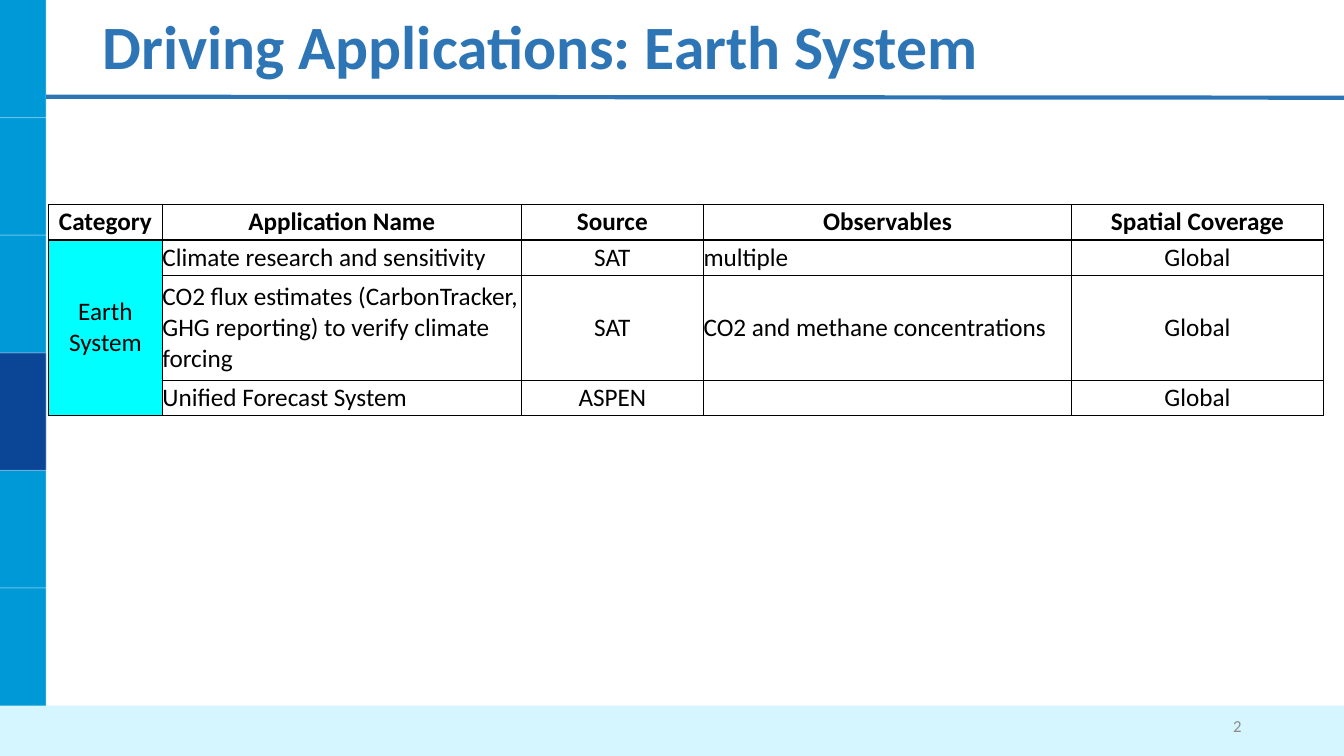
from dataclasses import dataclass

import pptx
import pptx.dml.color
import pptx.enum.shapes
import pptx.enum.text
import pptx.oxml
import pptx.oxml.ns
import pptx.util
from pptx.enum.text import MSO_ANCHOR, PP_ALIGN
from pptx.util import Pt

WIDTH, HEIGHT = 960, 540
BAR_WIDTH = 33
BAND = 84  # height of one sidebar block
FONT = "Calibri"
BLUE = "2E75B6"
A_NS = pptx.oxml.ns.nsdecls("a")


@dataclass
class Block:
    left: float
    top: float
    width: float
    height: float
    color: str


@dataclass
class Line:
    x1: float
    y1: float
    x2: float
    y2: float
    color: str = "FFFFFF"
    weight: float = 0.75
    opacity: int = 40


@dataclass
class Column:
    header: str
    width: float
    align: PP_ALIGN
    values: tuple[str, ...]


BLOCKS = [
    Block(0, 0, BAR_WIDTH, HEIGHT, "0099D8"),
    Block(0, 3 * BAND, BAR_WIDTH, BAND, "0B4596"),
    Block(0, 6 * BAND, WIDTH, HEIGHT - 6 * BAND, "D5F5FF"),
]
LINES = [
    *(Line(0, i * BAND, BAR_WIDTH, i * BAND) for i in range(1, 6)),
    Line(BAR_WIDTH, 0, BAR_WIDTH, 6 * BAND),
    Line(BAR_WIDTH, 69.1, WIDTH, 69.8, BLUE, 3, 100),
]
COLUMNS = [
    Column("Category", 81.4, PP_ALIGN.CENTER, ("Earth System", "", "")),
    Column("Application Name", 256.3, PP_ALIGN.LEFT, (
        "Climate research and sensitivity",
        "CO2 flux estimates (CarbonTracker, GHG reporting) to verify climate forcing",
        "Unified Forecast System",
    )),
    Column("Source", 130.3, PP_ALIGN.CENTER, ("SAT", "SAT", "ASPEN")),
    Column("Observables", 262.8, PP_ALIGN.LEFT,
           ("multiple", "CO2 and methane concentrations", "")),
    Column("Spatial Coverage", 180, PP_ALIGN.CENTER, ("Global",) * 3),
]
ROW_HEIGHTS = [25.2, 25.2, 74.9, 25.2]


def rgb(color: str) -> pptx.dml.color.RGBColor:
    return pptx.dml.color.RGBColor.from_string(color)


def add_run(p, text: str, size: float, color: str, bold: bool = False) -> None:
    r = p.add_run()
    r.text = text
    r.font.name = FONT
    r.font.size = Pt(size)
    r.font.bold = bold
    r.font.color.rgb = rgb(color)


def add_block(s, block: Block) -> None:
    sp = s.shapes.add_shape(
        pptx.enum.shapes.MSO_SHAPE.RECTANGLE,
        Pt(block.left), Pt(block.top), Pt(block.width), Pt(block.height))
    sp.shadow.inherit = False
    sp.fill.solid()
    sp.fill.fore_color.rgb = rgb(block.color)
    sp.line.fill.background()


def add_line(s, line: Line) -> None:
    cxn = s.shapes.add_connector(
        pptx.enum.shapes.MSO_CONNECTOR.STRAIGHT,
        Pt(line.x1), Pt(line.y1), Pt(line.x2), Pt(line.y2))
    cxn.line.width = Pt(line.weight)
    cxn.line.color.rgb = rgb(line.color)
    sp_pr = cxn.element.spPr
    if line.opacity < 100:
        color = sp_pr.find(".//" + pptx.oxml.ns.qn("a:srgbClr"))
        color.append(pptx.oxml.parse_xml(
            f'<a:alpha {A_NS} val="{line.opacity * 1000}"/>'))
    sp_pr.append(pptx.oxml.parse_xml(f"<a:effectLst {A_NS}/>"))


def add_title(s, text: str) -> None:
    sp = s.shapes.title
    sp.left, sp.top, sp.width, sp.height = Pt(66), Pt(2.9), Pt(828), Pt(65.5)
    tf = sp.text_frame
    tf.auto_size = pptx.enum.text.MSO_AUTO_SIZE.NONE
    tf.vertical_anchor = MSO_ANCHOR.MIDDLE
    p = tf.paragraphs[0]
    p.alignment = PP_ALIGN.LEFT
    p.line_spacing = 0.9
    add_run(p, text, 44, BLUE, bold=True)


def add_page_number(s, number: str) -> None:
    sp = s.shapes.add_textbox(Pt(678), Pt(504), Pt(216), Pt(28.8))
    tf = sp.text_frame
    tf.word_wrap = True
    tf.vertical_anchor = MSO_ANCHOR.MIDDLE
    p = tf.paragraphs[0]
    p.alignment = PP_ALIGN.RIGHT
    add_run(p, number, 12, "8C8C8C")


def format_cell(cell) -> None:
    """Remove the margins and the fill, and draw a thin black border."""
    cell.margin_left = cell.margin_right = cell.margin_top = cell.margin_bottom = 0
    cell.vertical_anchor = MSO_ANCHOR.MIDDLE
    tc_pr = cell._tc.get_or_add_tcPr()
    for side in ("lnL", "lnR", "lnT", "lnB"):
        tc_pr.append(pptx.oxml.parse_xml(
            f'<a:{side} {A_NS} w="{Pt(1)}"><a:solidFill>'
            f'<a:srgbClr val="000000"/></a:solidFill></a:{side}>'))
    cell.fill.background()


def add_applications_table(s) -> None:
    frame = s.shapes.add_table(
        len(ROW_HEIGHTS), len(COLUMNS), Pt(34.6), Pt(146.2),
        Pt(sum(c.width for c in COLUMNS)), Pt(sum(ROW_HEIGHTS)))
    table = frame.table
    table.first_row = table.horz_banding = False
    for row, height in zip(table.rows, ROW_HEIGHTS):
        row.height = Pt(height)
    for j, column in enumerate(COLUMNS):
        table.columns[j].width = Pt(column.width)
        for i, text in enumerate((column.header, *column.values)):
            cell = table.cell(i, j)
            format_cell(cell)
            p = cell.text_frame.paragraphs[0]
            p.alignment = PP_ALIGN.CENTER if i == 0 else column.align
            if text:
                add_run(p, text, 18, "000000", bold=i == 0)
    category = table.cell(1, 0)
    category.merge(table.cell(len(ROW_HEIGHTS) - 1, 0))
    category.fill.solid()
    category.fill.fore_color.rgb = rgb("00FFFF")


def main() -> None:
    prs = pptx.Presentation()
    prs.slide_width, prs.slide_height = Pt(WIDTH), Pt(HEIGHT)
    s = prs.slides.add_slide(prs.slide_layouts.get_by_name("Title Only"))
    for block in BLOCKS:
        add_block(s, block)
    for line in LINES:
        add_line(s, line)
    add_title(s, "Driving Applications: Earth System")
    add_page_number(s, "2")
    add_applications_table(s)
    prs.save("out.pptx")


if __name__ == "__main__":
    main()
